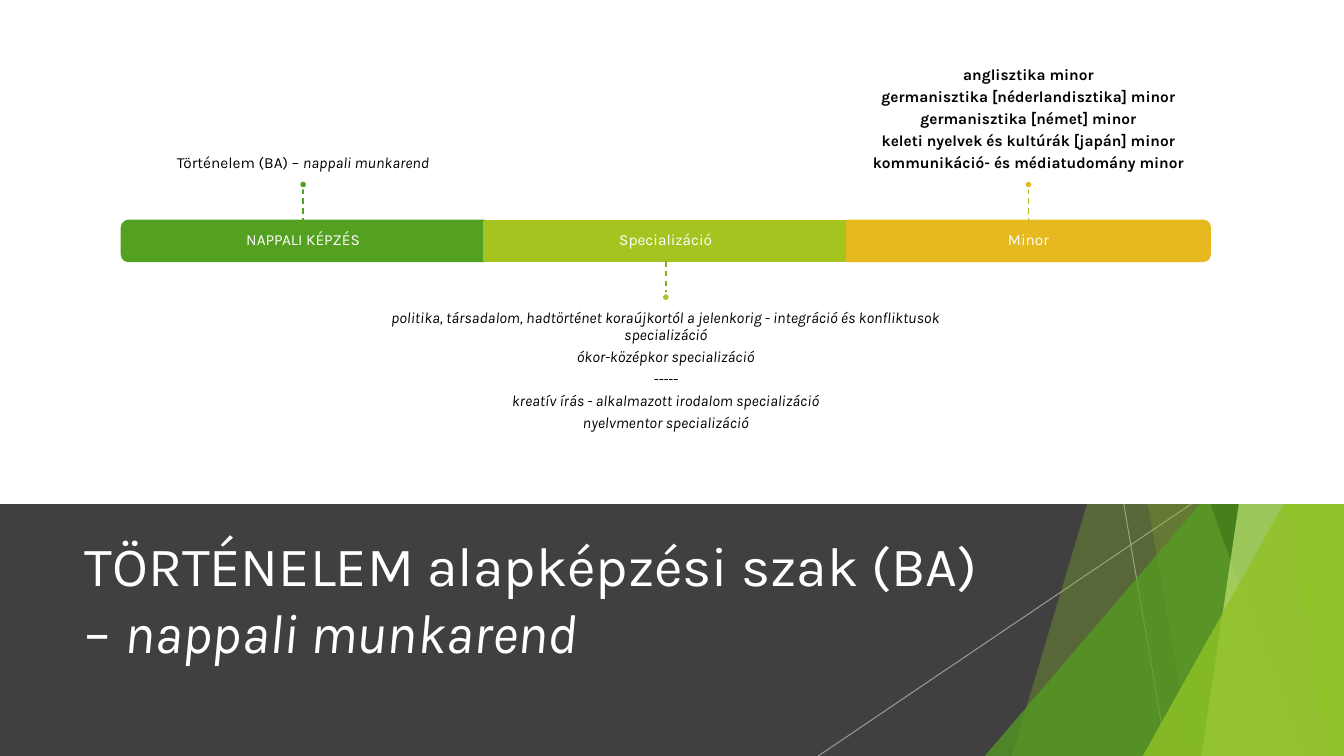
"""Builds the slide on the full-time history bachelor programme and its timeline."""
from dataclasses import dataclass

from lxml.etree import SubElement
from pptx import Presentation
from pptx.dml.color import RGBColor
from pptx.enum.dml import MSO_LINE
from pptx.enum.shapes import MSO_CONNECTOR, MSO_SHAPE
from pptx.enum.text import MSO_ANCHOR, MSO_AUTO_SIZE, PP_ALIGN
from pptx.oxml.ns import qn
from pptx.util import Cm, Pt

FONT = "Karla"
PAGE_WIDTH, PAGE_HEIGHT, BAND_TOP = 33.87, 19.05, 12.7
BAR_LEFT, BAR_TOP, BAR_HEIGHT, SEGMENT_WIDTH = 3.07, 5.56, 1.02, 9.14
STEM_LENGTH, DOT_SIZE = 0.81, 0.2
NOTE_WIDTH, NOTE_HEIGHT, NOTE_INSET = 15.21, 3.56, 0.23


@dataclass
class Facet:
    top_left: float
    bottom_left: float
    colour: str
    opacity: int


@dataclass
class Triangle:
    left: float
    top: float
    colour: str
    opacity: int


@dataclass
class Segment:
    label: str
    colour: str
    stem_colour: str
    notes: list[str]
    above: bool = True
    rotation: int = 0
    bold: bool = False
    italic: bool = False
    italic_tail: str = ""


DECORATION = [
    Facet(31.19, 25.5, "90C226", 30),
    Facet(26.67, 30.05, "90C226", 20),
    Triangle(24.82, 8.46, "54A021", 72),
    Facet(25.93, 32.79, "3F7819", 70),
    Facet(33.1, 30.28, "C0E474", 70),
    Facet(30.38, 33.48, "90C226", 65),
    Triangle(28.8, 9.98, "90C226", 80),
]

SEGMENTS = [
    Segment("NAPPALI KÉPZÉS", "54A021", "54A021", ["Történelem (BA) – "],
            rotation=270, italic_tail="nappali munkarend"),
    Segment("Specializáció", "A5C41F", "79B220", [
        "politika, társadalom, hadtörténet koraújkortól a jelenkorig - "
        "integráció és konfliktusok specializáció",
        "ókor-középkor specializáció",
        "-----",
        "kreatív írás - alkalmazott irodalom specializáció",
        "nyelvmentor specializáció",
    ], above=False, italic=True),
    Segment("Minor", "E6B91E", "A5C41F", [
        "anglisztika minor",
        "germanisztika [néderlandisztika] minor",
        "germanisztika [német] minor",
        "keleti nyelvek és kultúrák [japán] minor",
        "kommunikáció- és médiatudomány minor",
    ], rotation=90, bold=True),
]


def rgb(colour: str) -> RGBColor:
    """Turn a hex string into a colour."""
    return RGBColor.from_string(colour)


def set_opacity(shape, percent: int) -> None:
    """Make the explicit colours of a shape partly transparent."""
    for node in shape.element.spPr.iter(qn("a:srgbClr")):
        SubElement(node, qn("a:alpha")).set("val", str(percent * 1000))


def paint(shape, fill: str, outline: str = "") -> None:
    """Give a shape a flat fill and an optional outline."""
    shape.shadow.inherit = False
    shape.fill.solid()
    shape.fill.fore_color.rgb = rgb(fill)
    if outline:
        shape.line.color.rgb = rgb(outline)
        shape.line.width = Pt(1.5)
    else:
        shape.line.fill.background()


def add_box(page, kind, left: float, top: float, width: float, height: float,
            fill: str, outline: str = ""):
    """Add a painted preset shape measured in centimetres."""
    box = page.shapes.add_shape(kind, Cm(left), Cm(top), Cm(width), Cm(height))
    paint(box, fill, outline)
    return box


def add_line(page, start: tuple[float, float], end: tuple[float, float],
             colour: str, width: float):
    """Add a straight line without a shadow."""
    line = page.shapes.add_connector(
        MSO_CONNECTOR.STRAIGHT, Cm(start[0]), Cm(start[1]), Cm(end[0]), Cm(end[1]))
    line.line.color.rgb = rgb(colour)
    line.line.width = Pt(width)
    SubElement(line.element.spPr, qn("a:effectLst"))
    return line


def format_span(span, size: float, colour: str, bold: bool = False,
                italic: bool = False) -> None:
    """Set the font of one run."""
    span.font.name = FONT
    span.font.size = Pt(size)
    span.font.color.rgb = rgb(colour)
    span.font.bold = bold
    span.font.italic = italic


def add_tail(para, text: str, size: float, colour: str) -> None:
    """Append an italic ending to a paragraph."""
    span = para.add_run()
    span.text = text
    format_span(span, size, colour, italic=True)


def add_text(page, left: float, top: float, width: float, height: float,
             lines: list[str], colour: str, anchor, insets: tuple[float, float],
             bold: bool = False, italic: bool = False):
    """Add a centred text box with one paragraph per line."""
    box = page.shapes.add_textbox(Cm(left), Cm(top), Cm(width), Cm(height))
    frame = box.text_frame
    frame.word_wrap = True
    frame.vertical_anchor = anchor
    frame.margin_left = frame.margin_right = 0
    frame.margin_top, frame.margin_bottom = Cm(insets[0]), Cm(insets[1])
    frame.text = "\n".join(lines)
    for para in frame.paragraphs:
        para.alignment = PP_ALIGN.CENTER
        para.line_spacing = 0.9
        para.space_after = Pt(3.85)
        for span in para.runs:
            format_span(span, 11, colour, bold, italic)
    return box


def add_decoration(page, item: Facet | Triangle) -> None:
    """Add one translucent piece reaching the lower right corner."""
    if isinstance(item, Triangle):
        piece = page.shapes.add_shape(
            MSO_SHAPE.ISOSCELES_TRIANGLE, Cm(item.left), Cm(item.top),
            Cm(PAGE_WIDTH - item.left), Cm(PAGE_HEIGHT - item.top))
        piece.adjustments[0] = 1
    else:
        outline = page.shapes.build_freeform(Cm(item.top_left), 0)
        outline.add_line_segments([
            (Cm(PAGE_WIDTH), 0), (Cm(PAGE_WIDTH), Cm(PAGE_HEIGHT)),
            (Cm(item.bottom_left), Cm(PAGE_HEIGHT))], close=True)
        piece = outline.convert_to_shape()
    paint(piece, item.colour)
    set_opacity(piece, item.opacity)


def add_title(page) -> None:
    """Fill the title placeholder and bring it above the dark band."""
    title = page.shapes.title
    title.left, title.top, title.width, title.height = Cm(1.88), Cm(13.23), Cm(23.88), Cm(3.66)
    frame = title.text_frame
    frame.auto_size = MSO_AUTO_SIZE.NONE
    frame.vertical_anchor = MSO_ANCHOR.MIDDLE
    frame.text = "TÖRTÉNELEM alapképzési szak (BA) – "
    para = frame.paragraphs[0]
    para.alignment = PP_ALIGN.LEFT
    format_span(para.runs[0], 39.6, "FFFFFF")
    add_tail(para, "nappali munkarend", 39.6, "FFFFFF")
    title.element.getparent().append(title.element)


def add_segment(page, index: int, segment: Segment) -> None:
    """Add one timeline segment with its label, stem, dot and notes."""
    left = BAR_LEFT + index * SEGMENT_WIDTH
    centre = left + SEGMENT_WIDTH / 2
    if segment.rotation:
        bar = add_box(page, MSO_SHAPE.ROUND_2_SAME_RECTANGLE, centre - BAR_HEIGHT / 2,
                      BAR_TOP + (BAR_HEIGHT - SEGMENT_WIDTH) / 2, BAR_HEIGHT,
                      SEGMENT_WIDTH, segment.colour, segment.colour)
        bar.rotation = segment.rotation
    else:
        add_box(page, MSO_SHAPE.RECTANGLE, left, BAR_TOP, SEGMENT_WIDTH, BAR_HEIGHT,
                segment.colour, segment.colour)
    add_text(page, left, BAR_TOP, SEGMENT_WIDTH, BAR_HEIGHT, [segment.label], "FFFFFF",
             MSO_ANCHOR.MIDDLE, (NOTE_INSET, NOTE_INSET))

    if segment.above:
        stem_top = BAR_TOP - STEM_LENGTH
        dot_top = stem_top - DOT_SIZE
        note_top, anchor, insets = dot_top - NOTE_HEIGHT, MSO_ANCHOR.BOTTOM, (0, NOTE_INSET)
    else:
        stem_top = BAR_TOP + BAR_HEIGHT
        dot_top = stem_top + STEM_LENGTH
        note_top, anchor, insets = dot_top + DOT_SIZE, MSO_ANCHOR.TOP, (NOTE_INSET, 0)
    note = add_text(page, centre - NOTE_WIDTH / 2, note_top, NOTE_WIDTH, NOTE_HEIGHT,
                    segment.notes, "000000", anchor, insets, segment.bold, segment.italic)
    if segment.italic_tail:
        add_tail(note.text_frame.paragraphs[-1], segment.italic_tail, 11, "000000")
    stem = add_line(page, (centre, stem_top), (centre, stem_top + STEM_LENGTH),
                    segment.stem_colour, 1)
    stem.line.dash_style = MSO_LINE.DASH
    add_box(page, MSO_SHAPE.OVAL, centre - DOT_SIZE / 2, dot_top, DOT_SIZE, DOT_SIZE,
            segment.colour, "FFFFFF")


def main() -> None:
    """Build and save the deck."""
    deck = Presentation()
    deck.slide_width, deck.slide_height = Cm(PAGE_WIDTH), Cm(PAGE_HEIGHT)
    page = deck.slides.add_slide(deck.slide_layouts[5])
    add_box(page, MSO_SHAPE.RECTANGLE, 0, BAND_TOP, PAGE_WIDTH, PAGE_HEIGHT - BAND_TOP, "404040")
    for top_x, bottom_x in [(28.32, 29.41), (30.02, 20.62)]:
        ray = add_line(page, (top_x, BAND_TOP), (bottom_x, PAGE_HEIGHT), "BFBFBF", 0.75)
        set_opacity(ray, 70)
    for item in DECORATION:
        add_decoration(page, item)
    add_title(page)
    add_box(page, MSO_SHAPE.RECTANGLE, 0, 0, PAGE_WIDTH, BAND_TOP, "FFFFFF")
    for index, segment in enumerate(SEGMENTS):
        add_segment(page, index, segment)
    deck.save("out.pptx")


if __name__ == "__main__":
    main()
